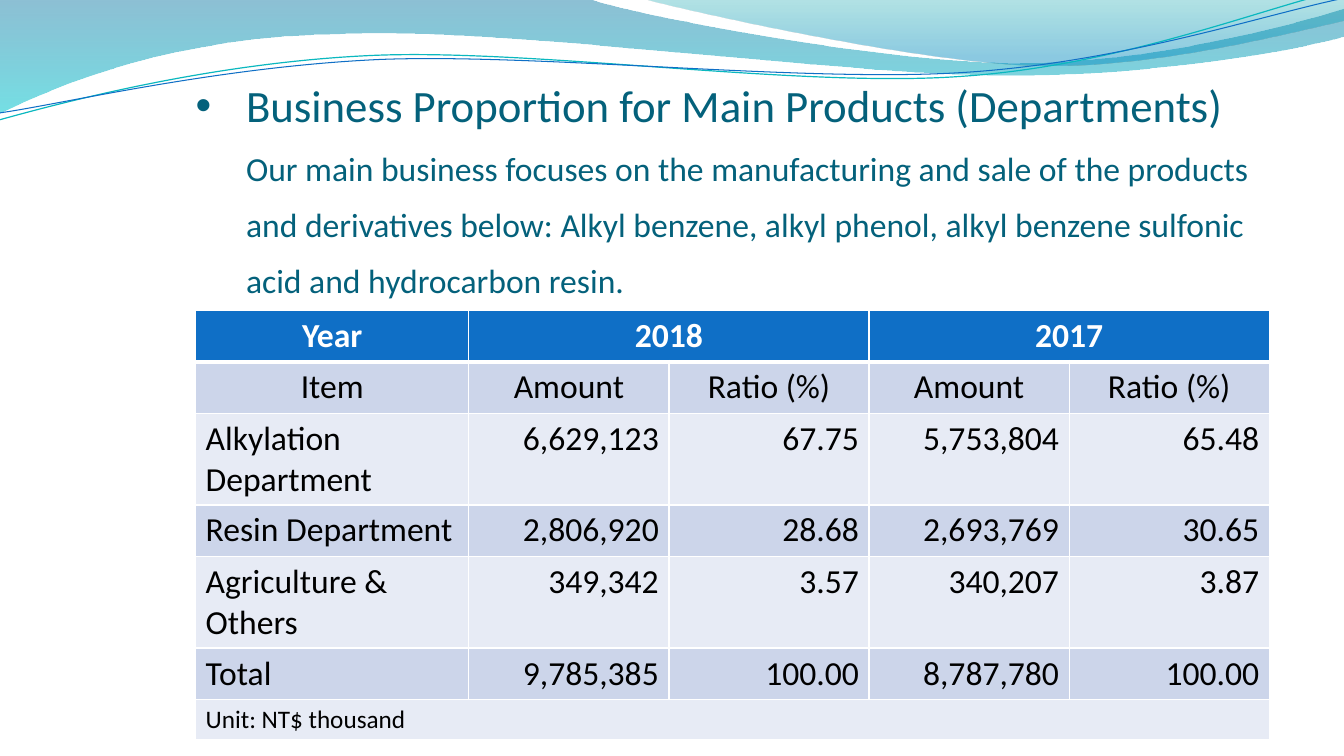
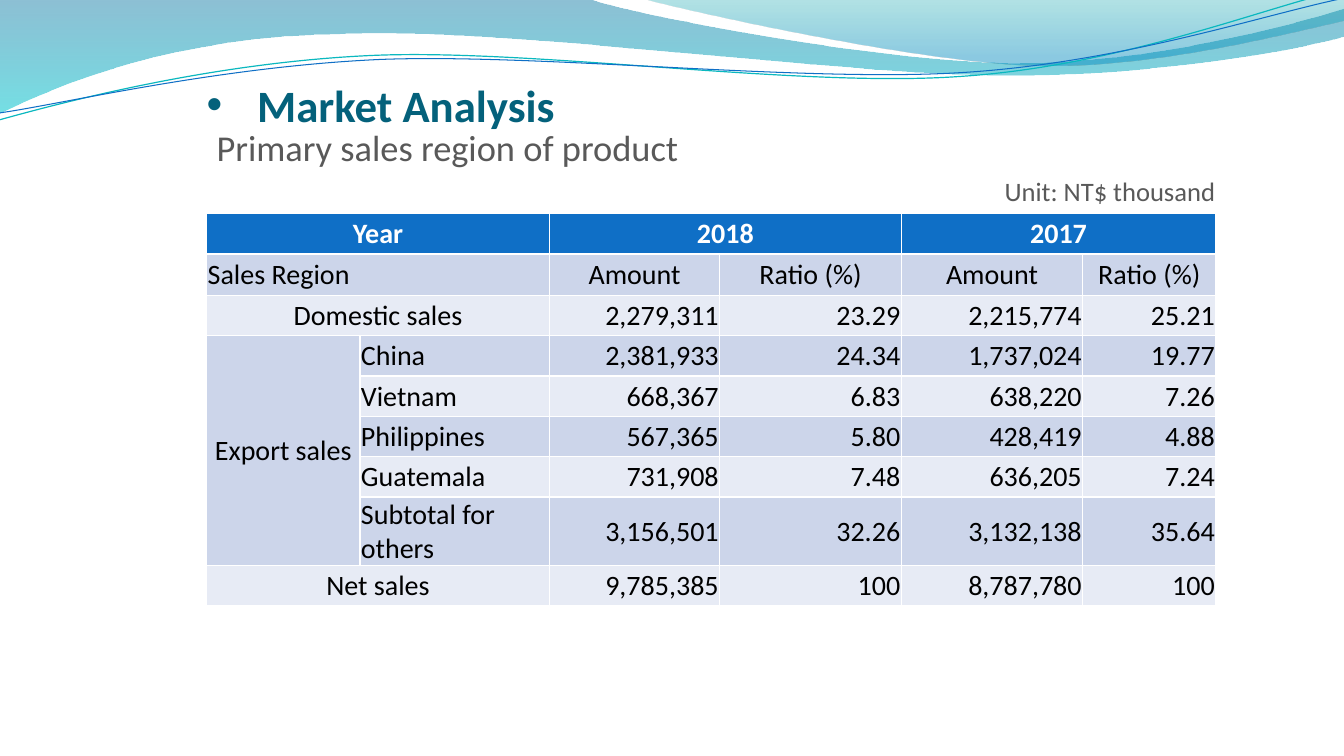
from dataclasses import dataclass

from lxml.etree import SubElement
from pptx import Presentation
from pptx.dml.color import RGBColor as RGB
from pptx.enum.text import MSO_ANCHOR as Anchor, PP_ALIGN as Align
from pptx.oxml import parse_xml
from pptx.oxml.ns import nsdecls, qn
from pptx.util import Inches, Pt


@dataclass(frozen=True)
class Theme:
    font: str = "Calibri"
    title: str = "04617B"
    body: str = "595959"
    header: str = "0F6FC6"
    header_text: str = "FFFFFF"
    cell_text: str = "000000"
    border: str = "FFFFFF"
    bands: tuple = ("E7EBF5", "CCD5EA")
    title_size: int = 32
    subtitle_size: int = 26
    intro_size: int = 24
    unit_size: int = 19
    note_size: int = 18


THEME = Theme()


def add_text(slide, box, insets, paragraphs):
    frame = slide.shapes.add_textbox(*map(Inches, box)).text_frame
    frame.word_wrap = True
    frame.vertical_anchor = Anchor.MIDDLE
    frame.margin_left, frame.margin_top, frame.margin_right, frame.margin_bottom = map(Inches, insets)
    for index, (text, size, color, bulleted) in enumerate(paragraphs):
        paragraph = frame.add_paragraph() if index else frame.paragraphs[0]
        if bulleted:
            properties = paragraph._p.get_or_add_pPr()
            properties.set("marL", str(Inches(0.5)))
            properties.set("indent", str(Inches(-0.5)))
            SubElement(properties, qn("a:buFont")).set("typeface", "Arial")
            SubElement(properties, qn("a:buChar")).set("char", "•")
        paragraph.add_run().text = text
        paragraph.font.name = THEME.font
        paragraph.font.size = Pt(size)
        paragraph.font.color.rgb = RGB.from_string(color)
    return frame.paragraphs


def add_sales_table(slide, box, widths, heights, rows, merges, left_labels,
                    size, header_rule, insets=(0.1, 0.05, 0.1, 0.05), anchor=Anchor.TOP):
    frame = slide.shapes.add_table(len(rows), len(widths), *map(Inches, box))
    table = frame.table
    for column, width in zip(table.columns, widths):
        column.width = Inches(width)
    for row, height in zip(table.rows, heights):
        row.height = Inches(height)
    for r, values in enumerate(rows):
        for c, value in enumerate(values):
            cell = table.cell(r, c)
            cell.margin_left, cell.margin_top, cell.margin_right, cell.margin_bottom = map(Inches, insets)
            cell.vertical_anchor = anchor
            cell.fill.solid()
            cell.fill.fore_color.rgb = RGB.from_string(THEME.bands[r % 2] if r else THEME.header)
            cell.text = value
            paragraph = cell.text_frame.paragraphs[0]
            if r and value[:1].isdigit():
                paragraph.alignment = Align.RIGHT
            else:
                paragraph.alignment = Align.LEFT if value in left_labels else Align.CENTER
            font = paragraph.font
            font.name = THEME.font
            font.size = Pt(THEME.note_size if values[0].startswith("Unit") else size)
            font.bold = r == 0
            font.color.rgb = RGB.from_string(THEME.cell_text if r else THEME.header_text)
    for r, row in enumerate(frame.element.iter(qn("a:tr"))):
        rules = {"L": 1, "R": 1, "T": header_rule if r == 1 else 1, "B": 1 if r else header_rule}
        for properties in row.iter(qn("a:tcPr")):
            for position, (side, weight) in enumerate(rules.items()):
                properties.insert(position, parse_xml(
                    f'<a:ln{side} {nsdecls("a")} w="{Pt(weight)}"><a:solidFill>'
                    f'<a:srgbClr val="{THEME.border}"/></a:solidFill></a:ln{side}>'))
    for top, left, bottom, right in merges:
        table.cell(top, left).merge(table.cell(bottom, right))


prs = Presentation()
prs.slide_width, prs.slide_height = Inches(13.33), Inches(7.5)
blank = prs.slide_layouts[6]
products = prs.slides.add_slide(blank)
market = prs.slides.add_slide(blank)

waves = [
    ((0, 0),
     [(5.87, 0), (6.34, 0.17, 8.85, 0.63, 10.11, 0.63), (11.38, 0.63, 12.78, 0.26, 13.33, 0.09),
      (13.35, 0.36), (13.11, 0.44, 11.6, 0.76, 9.94, 0.75), (8.29, 0.75, 5.09, 0.28, 3.43, 0.34),
      (1.72, 0.36, 0.61, 0.83, -0.01, 1.13), (0, 0)],
     [(0, "0074A1", 45), (1, "00C6CF", 55)], None),
    ((6.39, 0),
     [(6.79, 0.11, 9.09, 0.62, 10.25, 0.65), (11.41, 0.69, 12.82, 0.32, 13.33, 0.21),
      (13.33, 0), (6.39, 0)],
     [(0, "00A1A9", 30), (0.8, "008BBF", 45)], None),
    ((-0.01, 1.19),
     [(0.64, 1.01, 2.11, 0.62, 3.69, 0.55), (5.27, 0.48, 7.9, 0.87, 9.5, 0.76),
      (11.1, 0.66, 12.52, 0.08, 13.31, -0.1)],
     None, ("0AB8BF", 0.85)),
    ((0, 1.12),
     [(0.63, 1.03, 2.18, 0.66, 3.78, 0.59), (5.37, 0.53, 7.96, 0.82, 9.55, 0.72),
      (11.15, 0.62, 12.55, 0.14, 13.34, -0.02)],
     None, ("0F6FC6", 0.75)),
]
for start, segments, gradient, stroke in waves:
    builder = products.shapes.build_freeform(*map(Inches, start))
    for segment in segments:
        points = zip(map(Inches, segment[::2]), map(Inches, segment[1::2]))
        builder.add_line_segments(list(points), close=False)
    wave = builder.convert_to_shape()
    wave.shadow.inherit = False
    outline = next(wave.element.iter(qn("a:path")))
    steps = iter(outline.findall(qn("a:lnTo")))
    for segment in segments:
        step = next(steps)
        if len(segment) == 6:
            step.addprevious(parse_xml(f'<a:cubicBezTo {nsdecls("a")}/>'))
            curve = step.getprevious()
            for handle in (step, next(steps), next(steps)):
                curve.append(handle[0])
                outline.remove(handle)
    if gradient:
        SubElement(outline, qn("a:close"))
        wave.line.fill.background()
        wave.fill.gradient()
        wave.fill.gradient_angle = 270
        for stop, (position, color, _) in zip(wave.fill.gradient_stops, gradient):
            stop.position = position
            stop.color.rgb = RGB.from_string(color)
        for color, (_, _, opacity) in zip(wave.element.iter(qn("a:srgbClr")), gradient):
            SubElement(color, qn("a:alpha")).set("val", str(opacity * 1000))
    else:
        wave.fill.background()
        wave.line.color.rgb = RGB.from_string(stroke[0])
        wave.line.width = Pt(stroke[1])
    blank.shapes.element.append(wave.element)

title_insets = (0, 0.05, 0, 0)
intro, = add_text(products, (1.94, 0.17, 10.65, 3.34), title_insets, [
    ("Business Proportion for Main Products (Departments)", THEME.title_size, THEME.title, True)])
intro.line_spacing = Pt(40)
intro.space_before, intro.space_after = Pt(24), Pt(18)
intro.runs[0].font.size = Pt(THEME.title_size)
intro.add_line_break()
focus = intro.add_run()
focus.text = ("Our main business focuses on the manufacturing and sale of the products and derivatives below: "
              "Alkyl benzene, alkyl phenol, alkyl benzene sulfonic acid and hydrocarbon resin.")
focus.font.size = Pt(THEME.intro_size)

add_sales_table(
    products, (1.94, 3.08, 10.65, 4.26), [2.71] + [1.985] * 4, [0.51, 0.51, 0.91, 0.51, 0.91, 0.51, 0.4],
    [("Year", "2018", "", "2017", ""),
     ("Item", "Amount", "Ratio (%)", "Amount", "Ratio (%)"),
     ("Alkylation Department", "6,629,123", "67.75", "5,753,804", "65.48"),
     ("Resin Department", "2,806,920", "28.68", "2,693,769", "30.65"),
     ("Agriculture & Others", "349,342", "3.57", "340,207", "3.87"),
     ("Total", "9,785,385", "100.00", "8,787,780", "100.00"),
     ("Unit: NT$ thousand", "", "", "", "")],
    merges=[(0, 1, 0, 2), (0, 3, 0, 4), (6, 0, 6, 4)],
    left_labels={"Alkylation Department", "Resin Department", "Agriculture & Others", "Total",
                 "Unit: NT$ thousand"},
    size=24, header_rule=3)

heading, = add_text(market, (2.05, 0.57, 10.02, 0.88), title_insets, [
    ("Market Analysis", THEME.title_size, THEME.title, True)])
heading.font.bold = True
subtitle, unit = add_text(market, (2.05, 1.17, 10.1, 0.95), (0.1, 0.05, 0.1, 0.05), [
    ("Primary sales region of product", THEME.subtitle_size, THEME.body, False),
    ("Unit: NT$ thousand", THEME.unit_size, THEME.body, False)])
subtitle.space_before, unit.space_before = Pt(5), Pt(4)
unit.alignment = Align.RIGHT

add_sales_table(
    market, (2.05, 2.12, 10.02, 3.89), [1.52, 1.88, 1.69, 1.8, 1.8, 1.32],
    [0.4, 0.41] + [0.4] * 5 + [0.67, 0.4],
    [("Year", "", "2018", "", "2017", ""),
     ("Sales Region", "", "Amount", "Ratio (%)", "Amount", "Ratio (%)"),
     ("Domestic sales", "", "2,279,311", "23.29", "2,215,774", "25.21"),
     ("Export sales", "China", "2,381,933", "24.34", "1,737,024", "19.77"),
     ("", "Vietnam", "668,367", "6.83", "638,220", "7.26"),
     ("", "Philippines", "567,365", "5.80", "428,419", "4.88"),
     ("", "Guatemala", "731,908", "7.48", "636,205", "7.24"),
     ("", "Subtotal for others", "3,156,501", "32.26", "3,132,138", "35.64"),
     ("Net sales", "", "9,785,385", "100", "8,787,780", "100")],
    merges=[(0, 0, 0, 1), (0, 2, 0, 3), (0, 4, 0, 5), (1, 0, 1, 1), (2, 0, 2, 1), (3, 0, 7, 0), (8, 0, 8, 1)],
    left_labels={"Sales Region", "China", "Vietnam", "Philippines", "Guatemala", "Subtotal for others"},
    size=20, header_rule=1.5, insets=(0.01, 0.01, 0.01, 0), anchor=Anchor.MIDDLE)

prs.save("out.pptx")
